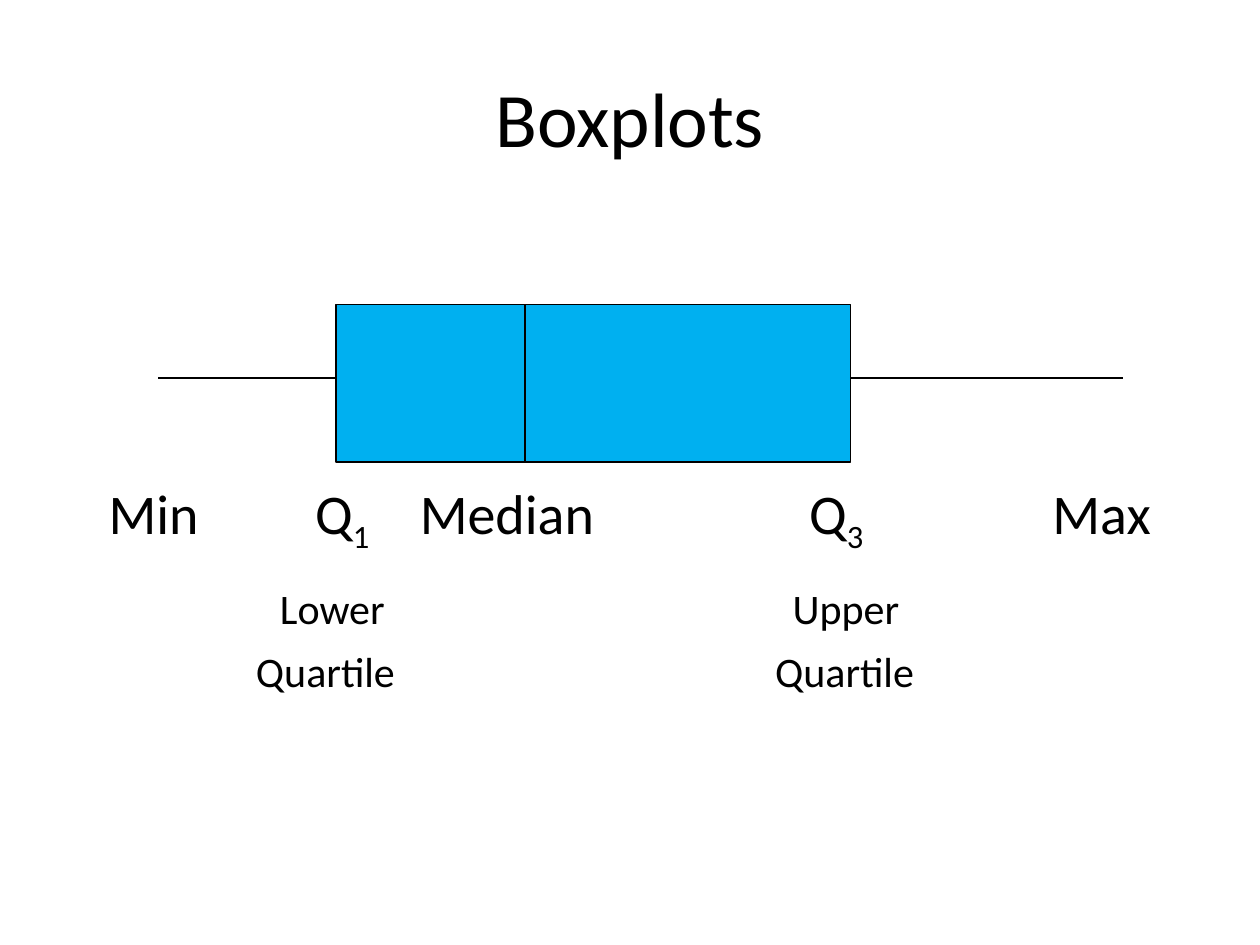
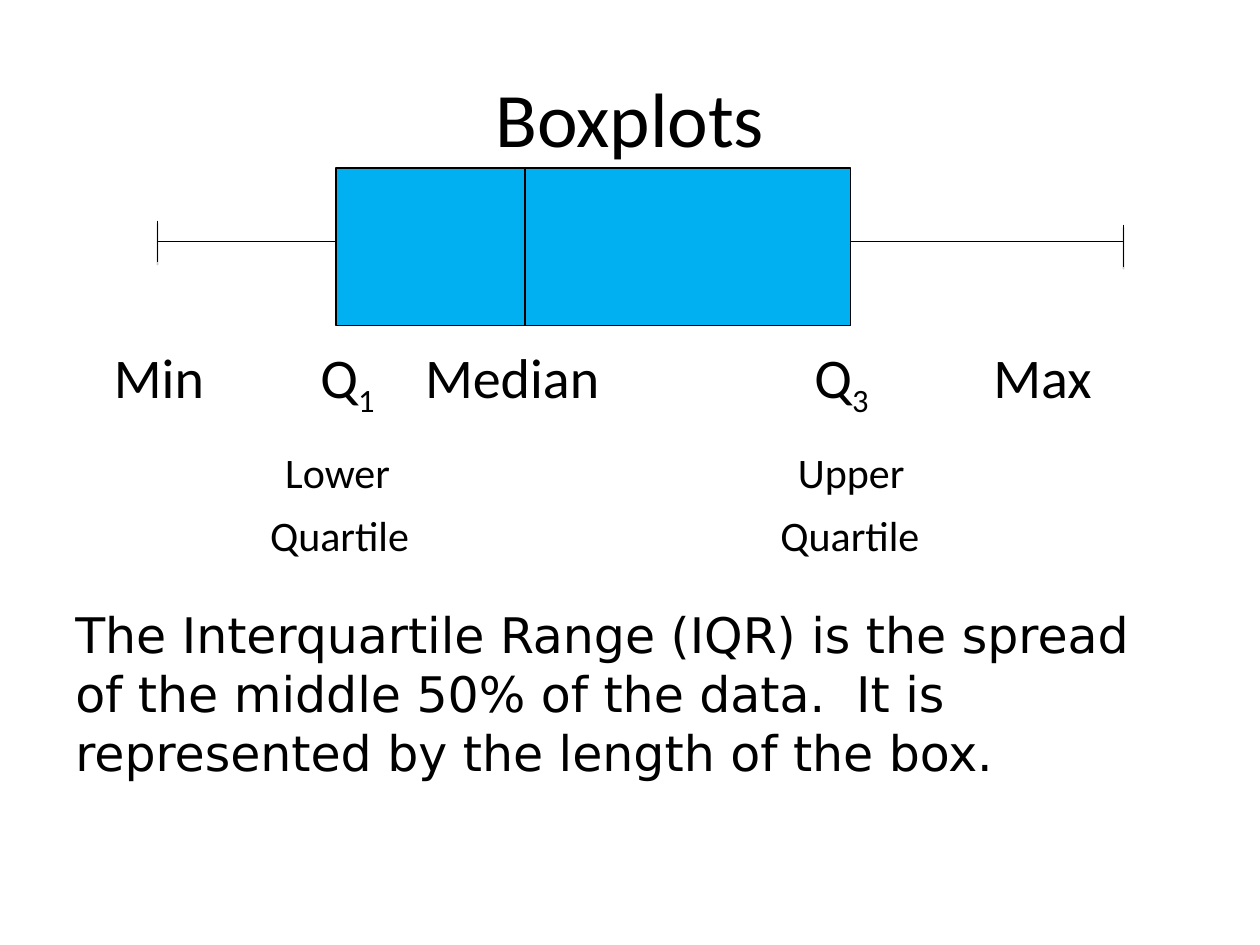
from dataclasses import dataclass

from lxml.etree import SubElement
from pptx import Presentation
from pptx.dml.color import RGBColor
from pptx.enum.shapes import MSO_CONNECTOR as Connector, MSO_SHAPE as Shape
from pptx.enum.text import MSO_ANCHOR as Anchor, PP_ALIGN as Align
from pptx.oxml.ns import qn
from pptx.util import Inches, Pt


@dataclass(frozen=True)
class Theme:
    ink: RGBColor = RGBColor(0x00, 0x00, 0x00)
    box_fill: RGBColor = RGBColor(0x00, 0xB0, 0xF0)
    shadow: str = "808080"
    font: str = "Calibri"
    note_font: str = "DejaVu Sans"
    title: int = 44
    label: int = 32
    note: int = 28
    sublabel: int = 24
    thin: float = 0.75
    tick: float = 1
    paragraph_gap: float = 0.24


THEME = Theme()
WIDTH, HEIGHT = Inches(10), Inches(7.5)
COLUMNS, ROWS = 120, 90

MINIMUM, Q1, MEDIAN, Q3, MAXIMUM = 15, 32, 50, 81, 107
BOX_ROWS, WHISKER_ROW = 15, 7


def across(columns):
    return round(WIDTH * columns / COLUMNS)


def down(rows):
    return round(HEIGHT * rows / ROWS)


def add_text_box(page, left, top, width, height, anchor=Anchor.TOP):
    box = page.shapes.add_textbox(across(left), down(top), across(width), down(height))
    box.text_frame.word_wrap = True
    box.text_frame.vertical_anchor = anchor
    return box.text_frame


def add_span(para, text, size, font=THEME.font, subscript=False):
    span = para.add_run()
    span.text = text
    span.font.size = Pt(size)
    span.font.name = font
    span.font.color.rgb = THEME.ink
    if subscript:
        span._r.get_or_add_rPr().set("baseline", "-25000")


def set_tabs(para, stops):
    tabs = SubElement(para._p.get_or_add_pPr(), qn("a:tabLst"))
    for stop in stops:
        SubElement(tabs, qn("a:tab"), pos=str(Inches(stop)), algn="l")


def add_line(shapes, start, end, weight=THEME.thin, shadow=False):
    (left, top), (right, bottom) = start, end
    line = shapes.add_connector(
        Connector.STRAIGHT, across(left), down(top), across(right), down(bottom)
    )
    line.line.color.rgb = THEME.ink
    line.line.width = Pt(weight)
    effects = SubElement(line._element.spPr, qn("a:effectLst"))
    if shadow:
        outer = SubElement(
            effects, qn("a:outerShdw"), dist=str(Pt(1.6)), dir="5400000", rotWithShape="0"
        )
        color = SubElement(outer, qn("a:srgbClr"), val=THEME.shadow)
        SubElement(color, qn("a:alpha"), val="38000")


def add_title(page, text):
    frame = add_text_box(page, 6, 3.6, 108, 15, anchor=Anchor.MIDDLE)
    para = frame.paragraphs[0]
    para.alignment = Align.CENTER
    add_span(para, text, THEME.title)


def add_boxplot(page, top):
    shapes = page.shapes.add_group_shape().shapes
    box = shapes.add_shape(
        Shape.RECTANGLE, across(Q1), down(top), across(Q3 - Q1), down(BOX_ROWS)
    )
    box.shadow.inherit = False
    box.fill.solid()
    box.fill.fore_color.rgb = THEME.box_fill
    box.line.color.rgb = THEME.ink
    box.line.width = Pt(THEME.thin)
    middle = top + WHISKER_ROW
    add_line(shapes, (Q3, middle), (MAXIMUM, middle))
    add_line(shapes, (Q1, middle), (MINIMUM, middle))
    add_line(shapes, (MEDIAN, top), (MEDIAN, top + BOX_ROWS))


def add_labels(page, left, top, max_stop, quartile_stop):
    frame = add_text_box(page, left, top, 108, 34.4)
    names = frame.paragraphs[0]
    set_tabs(names, (0.18, 1.82, 2.65, 5.74, max_stop))
    for text, subscript in (
        ("\tMin\tQ", False),
        ("1", True),
        ("\tMedian\tQ", False),
        ("3", True),
        ("\tMax", False),
    ):
        add_span(names, text, THEME.label, subscript=subscript)

    for words, stops, lead_size in (
        (("Lower", "Upper"), (1.54, 5.61), THEME.label),
        (("Quartile", "Quartile"), (quartile_stop, 5.47), THEME.sublabel),
    ):
        para = frame.add_paragraph()
        para.space_before = Pt(THEME.paragraph_gap * lead_size)
        set_tabs(para, stops)
        add_span(para, "\t", lead_size)
        add_span(para, "\t".join(words), THEME.sublabel)


def add_note(page, text):
    frame = add_text_box(page, 6, 57, 108, 18)
    add_span(frame.paragraphs[0], text, THEME.note, font=THEME.note_font)


def add_end_ticks(page):
    for column, row in ((MAXIMUM, 21.4), (MINIMUM, 21)):
        add_line(page.shapes, (column, row), (column, row + 4), THEME.tick, shadow=True)


def add_page(deck, plot_top, **labels):
    page = deck.slides.add_slide(deck.slide_layouts[6])
    add_title(page, "Boxplots")
    add_labels(page, **labels)
    add_boxplot(page, plot_top)
    return page


def main():
    deck = Presentation()
    deck.slide_width, deck.slide_height = WIDTH, HEIGHT
    add_page(deck, 29, left=7, top=45, max_stop=7.67, quartile_stop=1.35)
    page = add_page(deck, 16, left=7.5, top=32, max_stop=7.16, quartile_stop=1.42)
    add_note(
        page,
        "The Interquartile Range (IQR) is the spread of the middle 50% of the data.  "
        "It is represented by the length of the box.",
    )
    add_end_ticks(page)
    deck.save("out.pptx")


if __name__ == "__main__":
    main()
